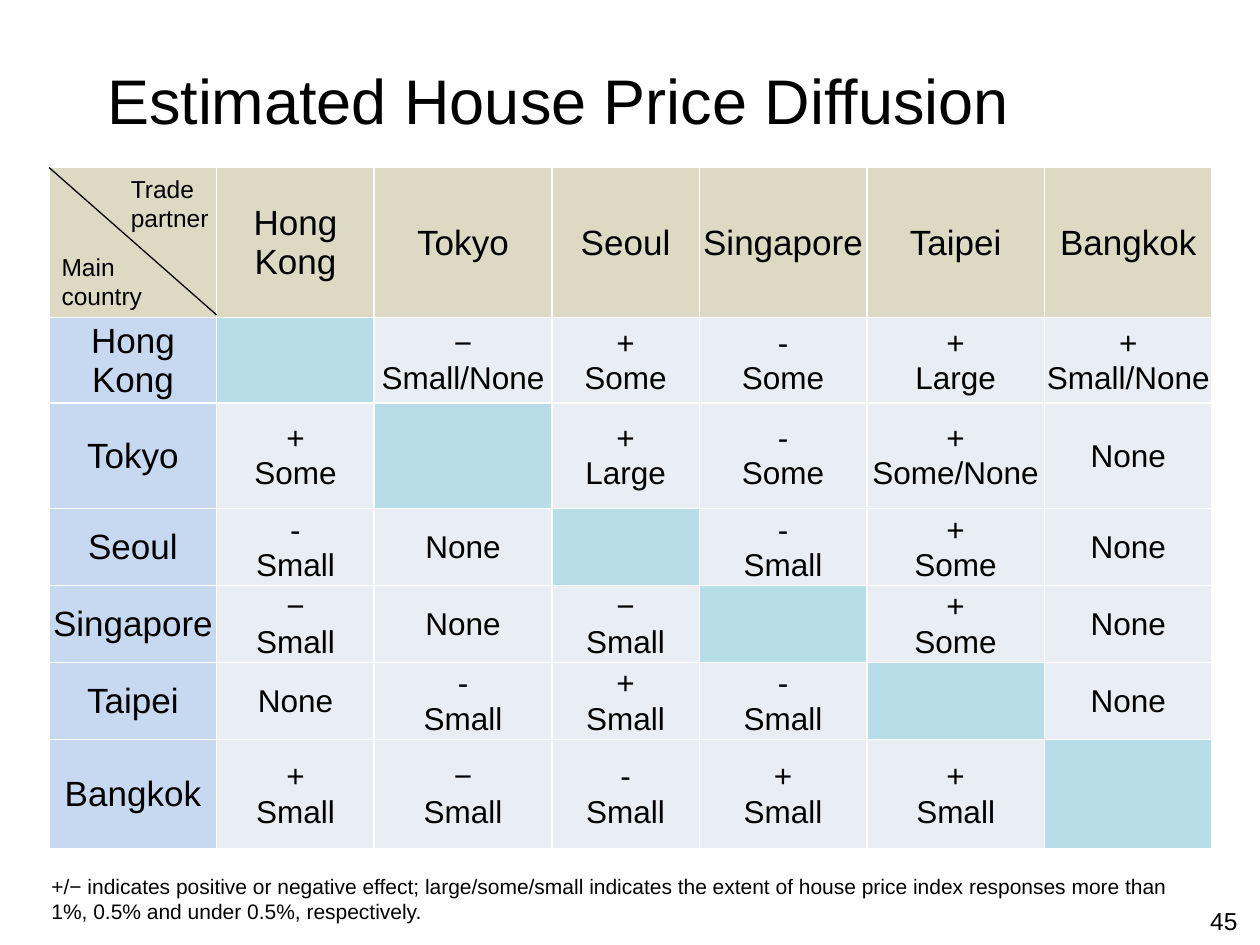
from lxml import etree
from pptx import Presentation, util as u
from pptx.dml.color import RGBColor
from pptx.enum import shapes, text
from pptx.oxml import ns

COLORS = {"ink": "000000", "rule": "FFFFFF", "header": "DDD9C3",
          "side": "C6D9F1", "same": "B7DEE8", "body": "E9EDF4"}
CITIES = ["Hong Kong", "Tokyo", "Seoul", "Singapore", "Taipei", "Bangkok"]
# One row per main country, one entry per trade partner: sign, then size
EFFECTS = [
    ["", "−\nSmall/None", "+\nSome", "-\nSome", "+\nLarge", "+\nSmall/None"],
    ["+\nSome", "", "+\nLarge", "-\nSome", "+\nSome/None", "None"],
    ["-\nSmall", "None", "", "-\nSmall", "+\nSome", "None"],
    ["−\nSmall", "None", "−\nSmall", "", "+\nSome", "None"],
    ["None", "-\nSmall", "+\nSmall", "-\nSmall", "", "None"],
    ["+\nSmall", "−\nSmall", "-\nSmall", "+\nSmall", "+\nSmall", ""],
]
# Lengths count cells of a grid of 100 columns by 75 rows
COLUMN_WIDTHS = [13.3, 12.5, 14.1, 11.7, 13.3, 14.1, 13.3]
ROW_HEIGHTS = [11.9, 6.5, 8.4, 6.1, 6.1, 6.1, 8.7]
TABLE_LEFT, TABLE_TOP = 3.9, 13.3
CELL_FORMAT = {"margin_left": u.Inches(0.01), "margin_right": u.Inches(0.01),
               "margin_top": u.Inches(0.01), "margin_bottom": 0,
               "vertical_anchor": text.MSO_ANCHOR.MIDDLE}


class Slide:
    def __init__(self, deck, font="Arial"):
        self.font = font
        self.unit = deck.slide_width / 100
        self.page = deck.slides.add_slide(deck.slide_layouts[5])

    def grid(self, *counts):
        return [u.Emu(round(count * self.unit)) for count in counts]

    def set_text(self, frame, words, size, align=text.PP_ALIGN.LEFT):
        frame.text = words
        style = {"name": self.font, "size": u.Pt(size), "bold": False}
        for para in frame.paragraphs:
            para.alignment = align
            for key, value in style.items():
                setattr(para.font, key, value)
            para.font.color.rgb = RGBColor.from_string(COLORS["ink"])

    def title(self, words, area, size):
        box = self.page.shapes.title
        for key, value in zip(("left", "top", "width", "height"), self.grid(*area)):
            setattr(box, key, value)
        box.text_frame.vertical_anchor = text.MSO_ANCHOR.MIDDLE
        self.set_text(box.text_frame, words, size)

    def label(self, words, area, size, align=text.PP_ALIGN.LEFT):
        box = self.page.shapes.add_textbox(*self.grid(*area))
        box.text_frame.word_wrap = True
        self.set_text(box.text_frame, words, size, align)

    def line(self, ends, width):
        rule = self.page.shapes.add_connector(
            shapes.MSO_CONNECTOR.STRAIGHT, *self.grid(*ends))
        rule.line.width = u.Pt(width)
        rule.line.color.rgb = RGBColor.from_string(COLORS["ink"])
        etree.SubElement(rule._element.spPr, ns.qn("a:effectLst"))

    def cell(self, cell, words, size, color):
        for key, value in CELL_FORMAT.items():
            setattr(cell, key, value)
        properties = cell._tc.get_or_add_tcPr()
        for side in ("lnL", "lnR", "lnT", "lnB"):
            edge = etree.SubElement(properties, ns.qn("a:" + side), w=str(u.Pt(1)))
            paint = etree.SubElement(edge, ns.qn("a:solidFill"))
            etree.SubElement(paint, ns.qn("a:srgbClr"), val=COLORS["rule"])
        cell.fill.solid()
        cell.fill.fore_color.rgb = RGBColor.from_string(COLORS[color])
        self.set_text(cell.text_frame, words, size, text.PP_ALIGN.CENTER)

    def table(self, rows):
        area = (TABLE_LEFT, TABLE_TOP, sum(COLUMN_WIDTHS), sum(ROW_HEIGHTS))
        table = self.page.shapes.add_table(
            len(rows), len(rows[0]), *self.grid(*area)).table
        table.first_row = table.horz_banding = False
        for column, width in zip(table.columns, self.grid(*COLUMN_WIDTHS)):
            column.width = width
        for row, height in zip(table.rows, self.grid(*ROW_HEIGHTS)):
            row.height = height
        for r, row in enumerate(rows):
            for c, words in enumerate(row):
                color = ("header" if r == 0 else "side" if c == 0
                         else "same" if r == c else "body")
                size = 20 if r == 0 or c == 0 else 18
                self.cell(table.cell(r, c), words, size, color)


def main():
    deck = Presentation()
    deck.slide_width, deck.slide_height = u.Inches(10), u.Inches(7.5)
    slide = Slide(deck)

    # Title and page number
    slide.title("Estimated House Price Diffusion", (7.5, 4.7, 85, 6.3), 36)
    slide.label("45", (78.4, 71.4, 20.8, 3.2), 14, text.PP_ALIGN.RIGHT)

    # Effects between cities
    slide.table([["", *CITIES]] + [[city, *row] for city, row in zip(CITIES, EFFECTS)])

    # Footnote
    slide.label("+/− indicates positive or negative effect; large/some/small indicates "
                "the extent of house price index responses more than 1%, 0.5% and "
                "under 0.5%, respectively.", (3.1, 68.8, 93, 5), 12)

    # Split corner cell
    slide.line((TABLE_LEFT, TABLE_TOP, TABLE_LEFT + COLUMN_WIDTHS[0], 25), 0.75)
    slide.label("Trade partner", (9.4, TABLE_TOP, 8.6, 5.7), 14)
    slide.label("Main country", (TABLE_LEFT, 19.5, 9.4, 5.7), 14)

    deck.save("out.pptx")


if __name__ == "__main__":
    main()
